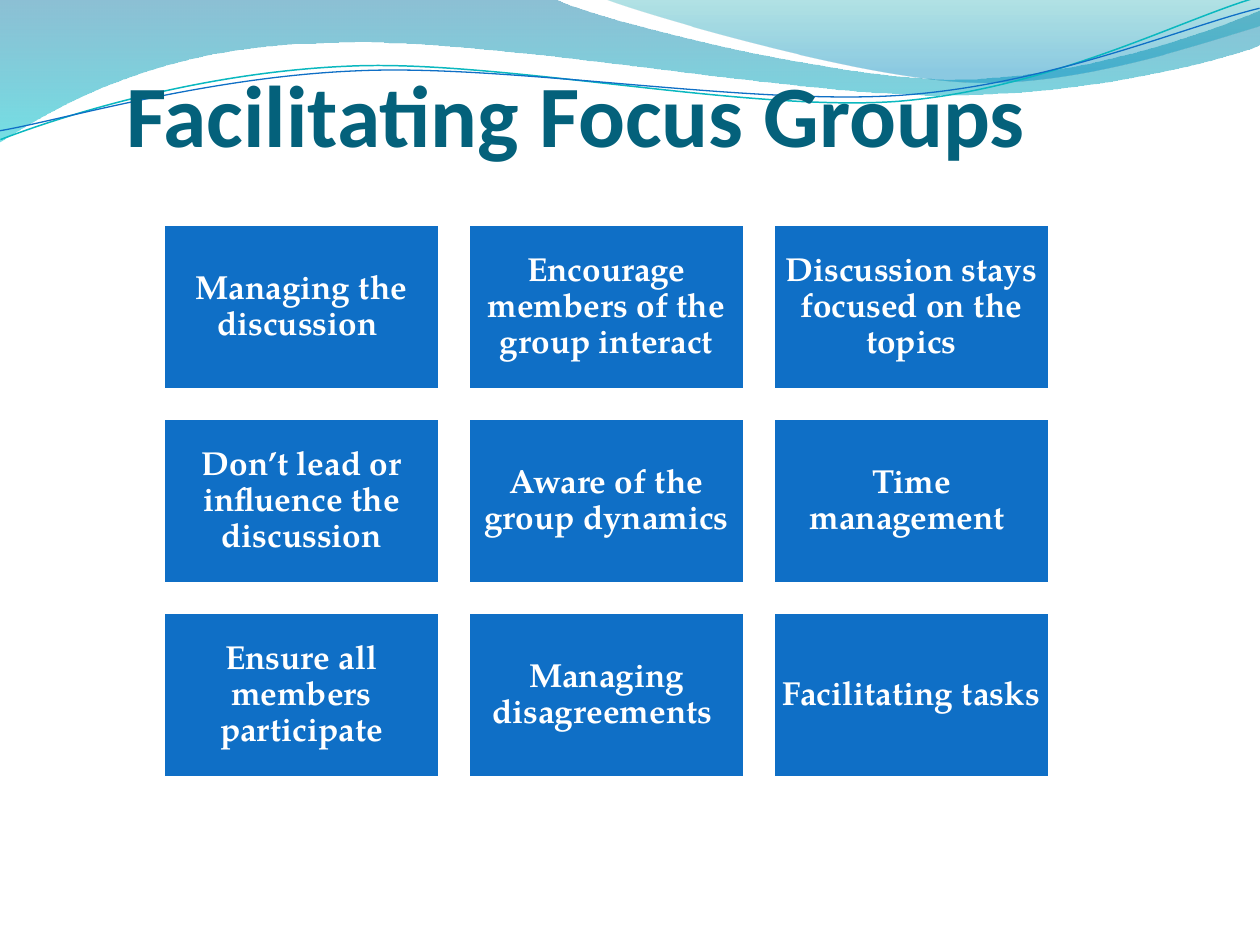
from collections import namedtuple
from dataclasses import dataclass
from itertools import chain, islice

from lxml import etree
from pptx import Presentation
from pptx.dml.color import RGBColor
from pptx.enum.shapes import MSO_SHAPE
from pptx.enum.text import MSO_ANCHOR, PP_ALIGN
from pptx.oxml.ns import qn
from pptx.util import Emu, Pt

RECTANGLE = MSO_SHAPE.RECTANGLE
CENTER = PP_ALIGN.CENTER
MIDDLE, BOTTOM = MSO_ANCHOR.MIDDLE, MSO_ANCHOR.BOTTOM
EMU_PER_PX = 914400 / 126

Box = namedtuple("Box", "left top width height")


@dataclass(frozen=True)
class Theme:
    title_color: str = "04617B"
    tile_color: str = "0F6FC6"
    tile_text: str = "FFFFFF"
    teal_line: str = "0AB8BF"
    blue_line: str = "0F6FC6"
    # Gradient stops: position, colour, opacity in percent
    back_wave: tuple = ((0, "0074A1", 45), (100, "00C6CF", 55))
    front_wave: tuple = ((0, "00A1A9", 30), (80, "008BBF", 45))
    title_font: str = "Calibri"
    tile_font: str = "TeX Gyre Pagella"
    title_size: int = 50
    tile_size: int = 19


THEME = Theme()

# Each path: a start point, then lines (one point) and curves (three points)
BACK_WAVE = [
    [(0, 0)], [(554, -1)],
    [(600, 21), (837, 79), (955, 79)], [(1075, 79), (1207, 33), (1260, 11)],
    [(1261, 45)],
    [(1239, 55), (1096, 96), (940, 95)], [(783, 95), (481, 35), (324, 43)],
    [(163, 45), (58, 105), (-1, 142)],
]
FRONT_WAVE = [
    [(604, -1)],
    [(641, 14), (859, 78), (969, 82)], [(1079, 87), (1211, 40), (1260, 26)],
    [(1260, 0)],
]
# The two thin curves are laid out level, then tilted
CURVE_TILT = -2.7
TEAL_CURVE = [
    [(-2, 110)],
    [(58, 90), (199, 52), (350, 53)], [(499, 53), (745, 118), (896, 114)],
    [(1049, 109), (1184, 45), (1260, 27)],
]
BLUE_CURVE = [
    [(-2, 101)],
    [(57, 94), (207, 57), (357, 58)], [(509, 58), (750, 112), (902, 108)],
    [(1052, 104), (1188, 52), (1262, 38)],
]
TITLE = "Facilitating Focus Groups"
TILES = [
    ["Managing the discussion ", "Encourage members of the group interact",
     "Discussion stays focused on the topics"],
    ["Don’t lead or influence the discussion", "Aware of the group dynamics",
     "Time management "],
    ["Ensure all members participate", "Managing disagreements ",
     "Facilitating tasks"],
]


def px(length):
    return Emu(round(length * EMU_PER_PX))


def rgb(color):
    return RGBColor.from_string(color)


def write_text(shape, text, *, font, size, color, anchor, insets, spacing=1.0):
    """Fill a shape with one bold, centred paragraph."""
    frame = shape.text_frame
    frame.word_wrap = True
    frame.vertical_anchor = anchor
    (frame.margin_left, frame.margin_top,
     frame.margin_right, frame.margin_bottom) = map(px, insets)
    para = frame.paragraphs[0]
    para.alignment = CENTER
    para.line_spacing = spacing
    span = para.add_run()
    span.text = text
    span.font.name = font
    span.font.size = Pt(size)
    span.font.bold = True
    span.font.color.rgb = rgb(color)


def add_path(page, box, path, closed):
    """Build a freeform, turning each three-point segment into a cubic curve."""
    points = [(px(box.left + x), px(box.top + y))
              for x, y in chain.from_iterable(path)]
    builder = page.shapes.build_freeform(*points[0], scale=1.0)
    builder.add_line_segments(points[1:], close=closed)
    shape = builder.convert_to_shape()
    shape.shadow.inherit = False
    lines = iter(list(shape.element.iter(qn("a:lnTo"))))
    for segment in path[1:]:
        first, *others = islice(lines, len(segment))
        if others:
            curve = etree.Element(qn("a:cubicBezTo"))
            first.addprevious(curve)
            for line in (first, *others):
                curve.append(line[0])
                line.getparent().remove(line)
    return shape


def add_wave(page, box, path, stops):
    wave = add_path(page, box, path, closed=True)
    wave.line.fill.background()
    wave.fill.gradient()
    wave.fill.gradient_angle = 270
    for stop, (position, color, _) in zip(wave.fill.gradient_stops, stops):
        stop.position = position / 100
        stop.color.rgb = rgb(color)
    # Opacity of each gradient stop
    for node, (_, _, opacity) in zip(wave.element.spPr.iter(qn("a:srgbClr")), stops):
        etree.SubElement(node, qn("a:alpha")).set("val", str(opacity * 1000))


def add_curve(page, box, path, color, width):
    curve = add_path(page, box, path, closed=False)
    curve.rotation = CURVE_TILT
    curve.fill.background()
    curve.line.color.rgb = rgb(color)
    curve.line.width = Pt(width)


def draw_header(page, box):
    add_wave(page, box, BACK_WAVE, THEME.back_wave)
    add_wave(page, box, FRONT_WAVE, THEME.front_wave)
    add_curve(page, box, TEAL_CURVE, THEME.teal_line, 0.85)
    add_curve(page, box, BLUE_CURVE, THEME.blue_line, 0.75)


def draw_title(page, box):
    title = page.shapes.add_textbox(*map(px, box))
    # The wide right inset sets the title left of the page centre
    write_text(title, TITLE, font=THEME.title_font, size=THEME.title_size,
               color=THEME.title_color, anchor=BOTTOM, insets=(0, 6, 108, 0))


def draw_tiles(page, box, gap=28):
    rows, columns = len(TILES), len(TILES[0])
    width = (box.width - gap * (columns - 1)) / columns
    height = (box.height - gap * (rows - 1)) / rows
    for row, labels in enumerate(TILES):
        for column, label in enumerate(labels):
            tile = page.shapes.add_shape(
                RECTANGLE,
                px(box.left + column * (width + gap)),
                px(box.top + row * (height + gap)),
                px(width), px(height))
            tile.shadow.inherit = False
            tile.fill.solid()
            tile.fill.fore_color.rgb = rgb(THEME.tile_color)
            tile.line.color.rgb = rgb(THEME.tile_text)
            tile.line.width = Pt(2)
            write_text(tile, label, font=THEME.tile_font, size=THEME.tile_size,
                       color=THEME.tile_text, anchor=MIDDLE,
                       insets=(9, 9, 9, 9), spacing=0.9)


def main():
    deck = Presentation()
    deck.slide_width, deck.slide_height = px(1260), px(945)
    page = deck.slides.add_slide(deck.slide_layouts[6])
    draw_header(page, Box(0, 0, 1260, 142))
    draw_title(page, Box(63, 46, 1134, 119))
    draw_tiles(page, Box(163, 224, 887, 554))
    deck.save("out.pptx")


if __name__ == "__main__":
    main()
